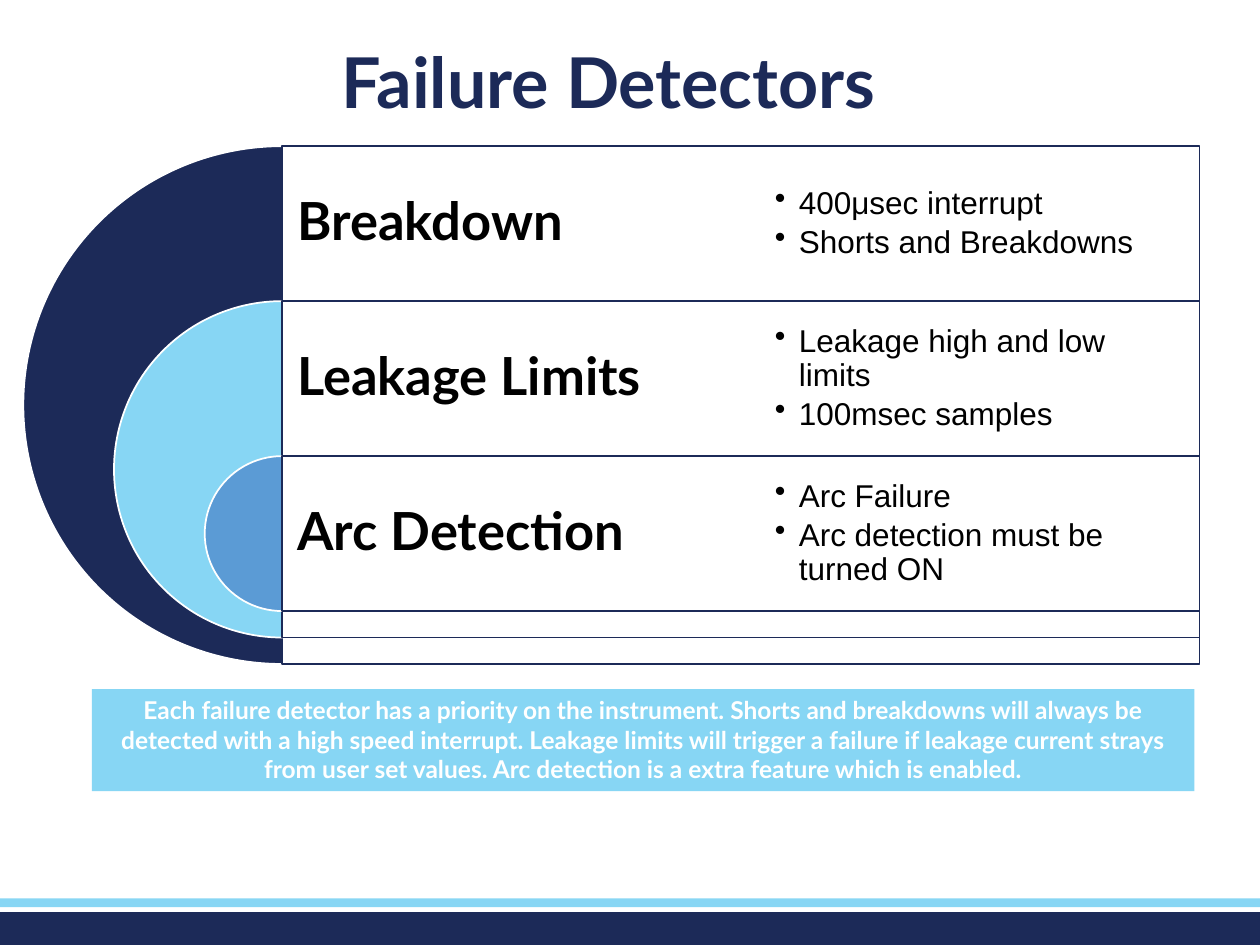
from dataclasses import dataclass

from lxml import etree
from pptx import Presentation
from pptx import util as u
from pptx.dml.color import RGBColor
from pptx.enum import shapes, text
from pptx.oxml.ns import qn


@dataclass(frozen=True)
class Theme:
    """Colours, fonts and type sizes of the slide."""
    navy: str = "1C2A58"
    footer_sky: str = "88D6F4"
    sky: str = "87D6F4"
    blue: str = "5B9BD5"
    white: str = "FFFFFF"
    black: str = "000000"
    heading_font: str = "Lato"
    body_font: str = "Arial"
    title_size: int = 40
    label_size: int = 30
    bullet_size: int = 18
    callout_size: int = 14


THEME = Theme()
CENTER_X, TOP = 2.24, 1.16
ROW_HEIGHT, COLUMN_WIDTH = 1.23, 3.64
OUTER_DIAMETER, DIAMETER_STEP = 4.11, 1.44
DETECTORS = [
    ("Breakdown", THEME.navy, ["400μsec interrupt", "Shorts and Breakdowns"]),
    ("Leakage Limits", THEME.sky, ["Leakage high and low limits", "100msec samples"]),
    ("Arc Detection", THEME.blue, ["Arc Failure", "Arc detection must be turned ON"]),
]
CALLOUT = (
    "Each failure detector has a priority on the instrument. Shorts and breakdowns "
    "will always be detected with a high speed interrupt. Leakage limits will trigger "
    "a failure if leakage current strays from user set values. Arc detection is a "
    "extra feature which is enabled."
)


def add_figure(slide, kind, box, fill, line=None):
    """Add a filled preset shape, outlined when a line colour is given."""
    shape = slide.shapes.add_shape(kind, *map(u.Inches, box))
    shape.shadow.inherit = False
    shape.fill.solid()
    shape.fill.fore_color.rgb = RGBColor.from_string(fill)
    if line:
        shape.line.color.rgb = RGBColor.from_string(line)
        shape.line.width = u.Pt(1)
    else:
        shape.line.fill.background()
    return shape


def set_opacity(shape, percent):
    """Set the opacity of a solid shape fill."""
    color = shape.fill._xPr.find(qn("a:solidFill"))[0]
    etree.SubElement(color, qn("a:alpha"), val=str(percent * 1000))


def add_bullet(paragraph):
    """Give a paragraph a hanging round bullet."""
    properties = paragraph._p.get_or_add_pPr()
    properties.set("marL", str(u.Inches(0.19)))
    properties.set("indent", str(u.Inches(-0.19)))
    etree.SubElement(properties, qn("a:buChar"), char="•")


def write_text(shape, lines, font, size, color, bold=False, align=text.PP_ALIGN.LEFT,
               anchor=text.MSO_ANCHOR.TOP, inset=None, spacing=None, after=0, bullets=False):
    """Write uniformly formatted paragraphs into a shape."""
    frame = shape.text_frame
    frame.text = "\n".join(lines)
    frame.word_wrap = True
    frame.vertical_anchor = anchor
    if inset is not None:
        frame.margin_left = frame.margin_right = u.Inches(inset)
        frame.margin_top = frame.margin_bottom = u.Inches(inset)
    for paragraph in frame.paragraphs:
        if bullets:
            add_bullet(paragraph)
        paragraph.alignment = align
        paragraph.space_after = u.Pt(after)
        if spacing:
            paragraph.line_spacing = spacing
        for run in paragraph.runs:
            run.font.name = font
            run.font.size = u.Pt(size)
            run.font.bold = bold
            run.font.color.rgb = RGBColor.from_string(color)


def add_text(slide, box, lines, **style):
    """Add a text box with the given style."""
    write_text(slide.shapes.add_textbox(*map(u.Inches, box)), lines, **style)


def add_detector(slide, index, label, color, details):
    """Add one half disc with its panel, label and bullets."""
    top = TOP + index * ROW_HEIGHT
    diameter = OUTER_DIAMETER - index * DIAMETER_STEP
    disc = add_figure(slide, shapes.MSO_SHAPE.PIE,
                      (CENTER_X - diameter / 2, top, diameter, diameter), color, THEME.white)
    disc.adjustments[0], disc.adjustments[1] = 54, 162
    panel = add_figure(slide, shapes.MSO_SHAPE.RECTANGLE,
                       (CENTER_X, top, 2 * COLUMN_WIDTH, diameter), THEME.white, THEME.navy)
    set_opacity(panel, 90)
    shared = dict(color=THEME.black, anchor=text.MSO_ANCHOR.MIDDLE, spacing=0.9)
    add_text(slide, (CENTER_X, top, COLUMN_WIDTH, ROW_HEIGHT), [label], bold=True,
             font=THEME.heading_font, size=THEME.label_size, inset=0.12, after=10.5, **shared)
    add_text(slide, (CENTER_X + COLUMN_WIDTH, top, COLUMN_WIDTH, ROW_HEIGHT), details,
             font=THEME.body_font, size=THEME.bullet_size, inset=0.27, after=2.7,
             bullets=True, **shared)


def main():
    """Build and save the slide."""
    presentation = Presentation()
    presentation.slide_width, presentation.slide_height = u.Inches(10), u.Inches(7.5)
    slide = presentation.slides.add_slide(presentation.slide_layouts[6])
    rectangle = shapes.MSO_SHAPE.RECTANGLE
    add_figure(slide, rectangle, (0, 7.24, 10, 0.26), THEME.navy)
    add_figure(slide, rectangle, (0, 7.13, 10, 0.07), THEME.footer_sky)
    heading = dict(font=THEME.heading_font, bold=True, align=text.PP_ALIGN.CENTER)
    callout = add_figure(slide, rectangle, (0.73, 5.47, 8.75, 0.81), THEME.sky)
    write_text(callout, [CALLOUT], size=THEME.callout_size, color=THEME.white, **heading)
    for index, detector in enumerate(DETECTORS):
        add_detector(slide, index, *detector)
    add_text(slide, (0.33, 0.33, 9, 0.66), ["Failure Detectors"], size=THEME.title_size,
             color=THEME.navy, spacing=0.9, **heading)
    presentation.save("out.pptx")


if __name__ == "__main__":
    main()
